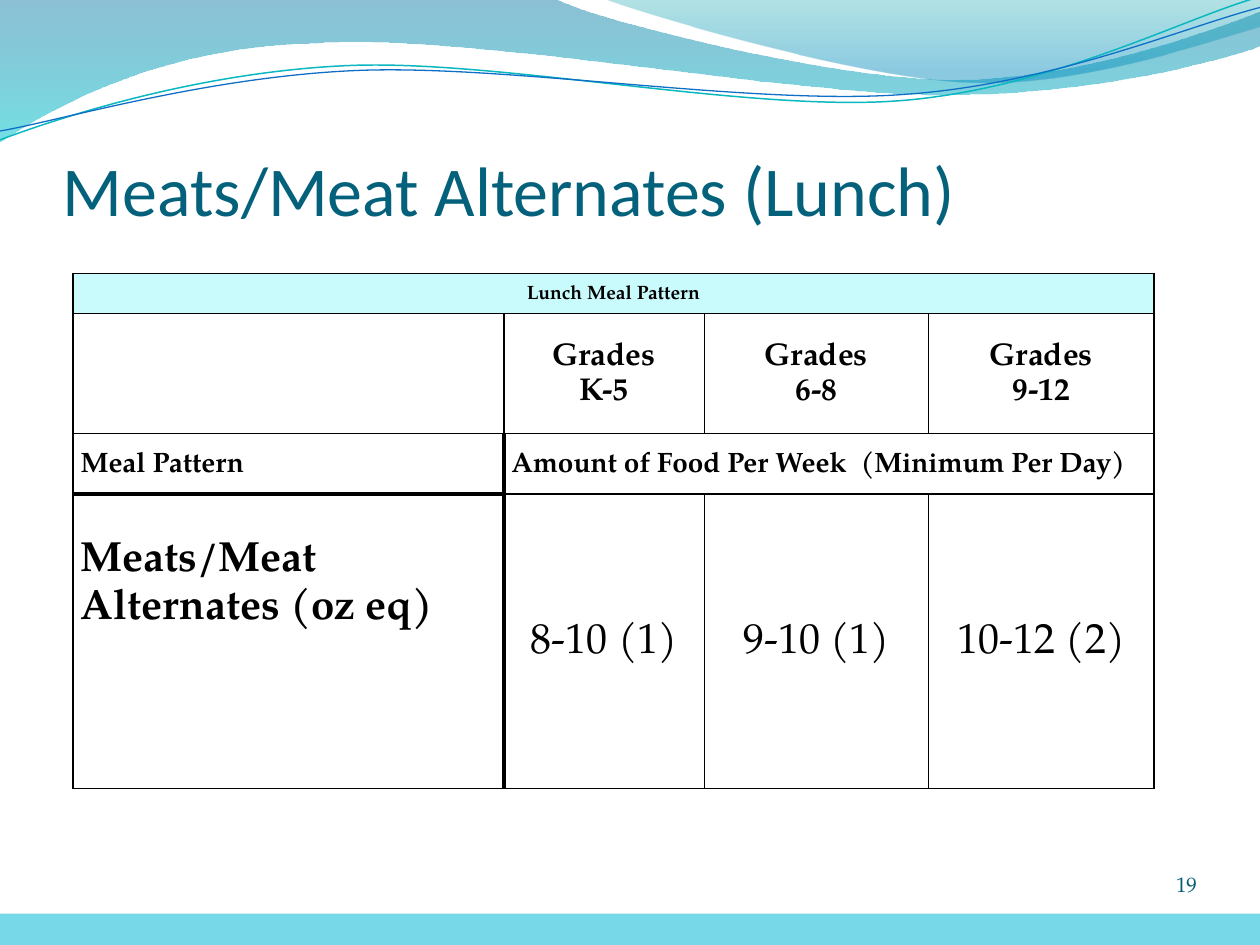
from math import cos, radians, sin

from lxml import etree
from pptx import Presentation
from pptx.dml.color import RGBColor
from pptx.enum.shapes import MSO_SHAPE
from pptx.enum.text import MSO_ANCHOR, PP_ALIGN
from pptx.oxml.ns import qn
from pptx.util import Inches, Pt

RECTANGLE = MSO_SHAPE.RECTANGLE
TOP, MIDDLE, BOTTOM = MSO_ANCHOR.TOP, MSO_ANCHOR.MIDDLE, MSO_ANCHOR.BOTTOM
LEFT, CENTER, RIGHT = PP_ALIGN.LEFT, PP_ALIGN.CENTER, PP_ALIGN.RIGHT
SERIF = "TeX Gyre Pagella"
TILT = 2.7
color = RGBColor.from_string

# The grid has 10 columns and 7.5 rows, each one inch
presentation = Presentation()
presentation.slide_width, presentation.slide_height = Inches(10), Inches(7.5)
slide = presentation.slides.add_slide(presentation.slide_layouts[6])


def write(frame, lines, size, font, hex_color, bold=False, align=LEFT, spacing=1.0):
    frame.word_wrap = True
    for index, line in enumerate(lines):
        paragraph = frame.add_paragraph() if index else frame.paragraphs[0]
        paragraph.alignment = align
        paragraph.line_spacing = spacing
        run = paragraph.add_run()
        run.text = line
        run.font.size, run.font.name, run.font.bold = Pt(size), font, bold
        run.font.color.rgb = color(hex_color)


def draw_wave(start, segments, closed=False):
    """Draw segments of one point (straight) or three points (Bezier curve)."""
    points = [(Inches(x), Inches(y)) for segment in segments for x, y in segment]
    builder = slide.shapes.build_freeform(Inches(start[0]), Inches(start[1]))
    builder.add_line_segments(points, close=closed)
    shape = builder.convert_to_shape()
    shape.shadow.inherit = False
    steps = iter(list(shape.element.spPr.iter(qn("a:lnTo"))))
    for segment in segments:
        first, *others = [next(steps) for _ in segment]
        if others:
            first.tag = qn("a:cubicBezTo")
        for step in others:
            first.append(step[0])
            step.getparent().remove(step)
    return shape


# Gradient waves: start, segments, then (position, colour, opacity) stops
bands = [
    ((0, 0),
     [[(4.4, -0.01)],
      [(4.76, 0.17), (6.64, 0.63), (7.58, 0.63)],
      [(8.53, 0.63), (9.58, 0.26), (10, 0.09)],
      [(10.01, 0.36)],
      [(9.83, 0.44), (8.7, 0.76), (7.46, 0.75)],
      [(6.22, 0.75), (3.82, 0.28), (2.57, 0.34)],
      [(1.29, 0.36), (0.46, 0.83), (-0.01, 1.13)],
      [(0, 0)]],
     [(0, "0074A1", 45), (1, "00C6CF", 55)]),
    ((4.79, -0.01),
     [[(5.09, 0.11), (6.82, 0.62), (7.69, 0.65)],
      [(8.56, 0.69), (9.61, 0.32), (10, 0.21)],
      [(10, 0)],
      [(4.79, -0.01)]],
     [(0, "00A1A9", 30), (0.8, "008BBF", 45)]),
]
for start, segments, stops in bands:
    band = draw_wave(start, segments, closed=True)
    band.line.fill.background()
    band.fill.gradient()
    band.fill.gradient_angle = 270
    for stop, (position, hex_color, _) in zip(band.fill.gradient_stops, stops):
        stop.position = position
        stop.color.rgb = color(hex_color)
    for node, (_, _, opacity) in zip(band.element.spPr.iter(qn("a:srgbClr")), stops):
        etree.SubElement(node, qn("a:alpha"), val=str(opacity * 1000))

# Thin wave lines, levelled about their centre and then tilted as shapes
strands = [
    ((4.99, 0.58), (0, 1.11),
     [[(0.48, 0.93), (1.58, 0.57), (2.77, 0.52)],
      [(3.95, 0.47), (5.93, 0.89), (7.13, 0.8)],
      [(8.33, 0.71), (9.38, 0.15), (9.98, -0.02)]], "0AB8BF", 0.85),
    ((5, 0.59), (0, 1.04),
     [[(0.47, 0.96), (1.64, 0.61), (2.83, 0.56)],
      [(4.03, 0.51), (5.97, 0.84), (7.17, 0.75)],
      [(8.36, 0.67), (9.41, 0.21), (10, 0.06)]], "0F6FC6", 0.75),
]
cosine, sine = cos(radians(TILT)), sin(radians(TILT))
for (center_x, center_y), start, curves, hex_color, width in strands:
    (level_start,), *level_curves = [
        [(center_x + (x - center_x) * cosine - (y - center_y) * sine,
          center_y + (x - center_x) * sine + (y - center_y) * cosine) for x, y in curve]
        for curve in [[start], *curves]]
    strand = draw_wave(level_start, level_curves)
    strand.rotation = 360 - TILT
    strand.fill.background()
    strand.line.color.rgb = color(hex_color)
    strand.line.width = Pt(width)

# Title and page number
labels = [
    ("Meats/Meat Alternates (Lunch)", (0.5, 0.58, 9, 1.25), 0.05, BOTTOM, 40, "Calibri", "04617B", LEFT),
    ("19", (8.67, 6.92, 0.83, 0.42), 0, TOP, 12, SERIF, "045D75", RIGHT),
]
for text, place, top_margin, anchor, size, font, hex_color, align in labels:
    frame = slide.shapes.add_textbox(*map(Inches, place)).text_frame
    frame.margin_left = frame.margin_right = frame.margin_bottom = 0
    frame.margin_top = Inches(top_margin)
    frame.vertical_anchor = anchor
    write(frame, [text], size, font, hex_color, align=align)

# Meal pattern table
column_widths = [3.42, 1.59, 1.78, 1.79]
row_heights = [0.32, 0.95, 0.48, 2.34]
table = slide.shapes.add_table(
    len(row_heights), len(column_widths), Inches(0.58), Inches(2.17),
    Inches(sum(column_widths)), Inches(sum(row_heights))).table
for column, width in zip(table.columns, column_widths):
    column.width = Inches(width)
for row, height in zip(table.rows, row_heights):
    row.height = Inches(height)

# Borders and fills, with heavy rules around the row headings
heavy = {(2, 0): ("lnR", "lnB"), (2, 1): ("lnL",), (3, 0): ("lnR", "lnT"), (3, 1): ("lnL",)}
for row in range(len(row_heights)):
    for column in range(len(column_widths)):
        cell = table.cell(row, column)
        cell.margin_left = cell.margin_right = Inches(0.06)
        cell.margin_top = cell.margin_bottom = 0
        cell.vertical_anchor = MIDDLE
        properties = cell._tc.get_or_add_tcPr()
        for side in ("lnL", "lnR", "lnT", "lnB"):
            width = Pt(2.25 if side in heavy.get((row, column), ()) else 1)
            line = etree.SubElement(properties, qn("a:" + side), w=str(width))
            line_fill = etree.SubElement(line, qn("a:solidFill"))
            etree.SubElement(line_fill, qn("a:srgbClr"), val="000000")
        cell.fill.solid()
        cell.fill.fore_color.rgb = color("FFFFFF" if row else "C9FAFC")
table.cell(0, 0).merge(table.cell(0, 3))
table.cell(2, 1).merge(table.cell(2, 3))

# Cell text
cell_texts = [
    (0, 0, ["Lunch Meal Pattern"], 11, True, CENTER),
    (2, 0, ["Meal Pattern"], 16, True, LEFT),
    (2, 1, ["Amount of Food Per Week  (Minimum Per Day)"], 16, True, LEFT),
    (3, 0, ["Meats/Meat Alternates (oz eq)"], 24, True, LEFT),
]
grades = [("K-5", "8-10 (1)"), ("6-8", "9-10 (1)"), ("9-12", "10-12 (2)")]
for column, (grade, amount) in enumerate(grades, start=1):
    cell_texts.append((1, column, ["Grades", grade], 18, True, CENTER))
    cell_texts.append((3, column, [amount], 24, False, CENTER))
for row, column, lines, size, bold, align in cell_texts:
    write(table.cell(row, column).text_frame, lines, size, SERIF, "000000", bold, align, 1.15)

# The food heading hangs below the top of its cell
food_cell = table.cell(3, 0)
food_cell.vertical_anchor = TOP
food_cell.margin_top = Inches(0.33)

# Footer bar
footer = slide.shapes.add_shape(RECTANGLE, 0, Inches(7.25), Inches(10), Inches(0.25))
footer.shadow.inherit = False
footer.fill.solid()
footer.fill.fore_color.rgb = color("77D9E8")
footer.line.fill.background()

presentation.save("out.pptx")
